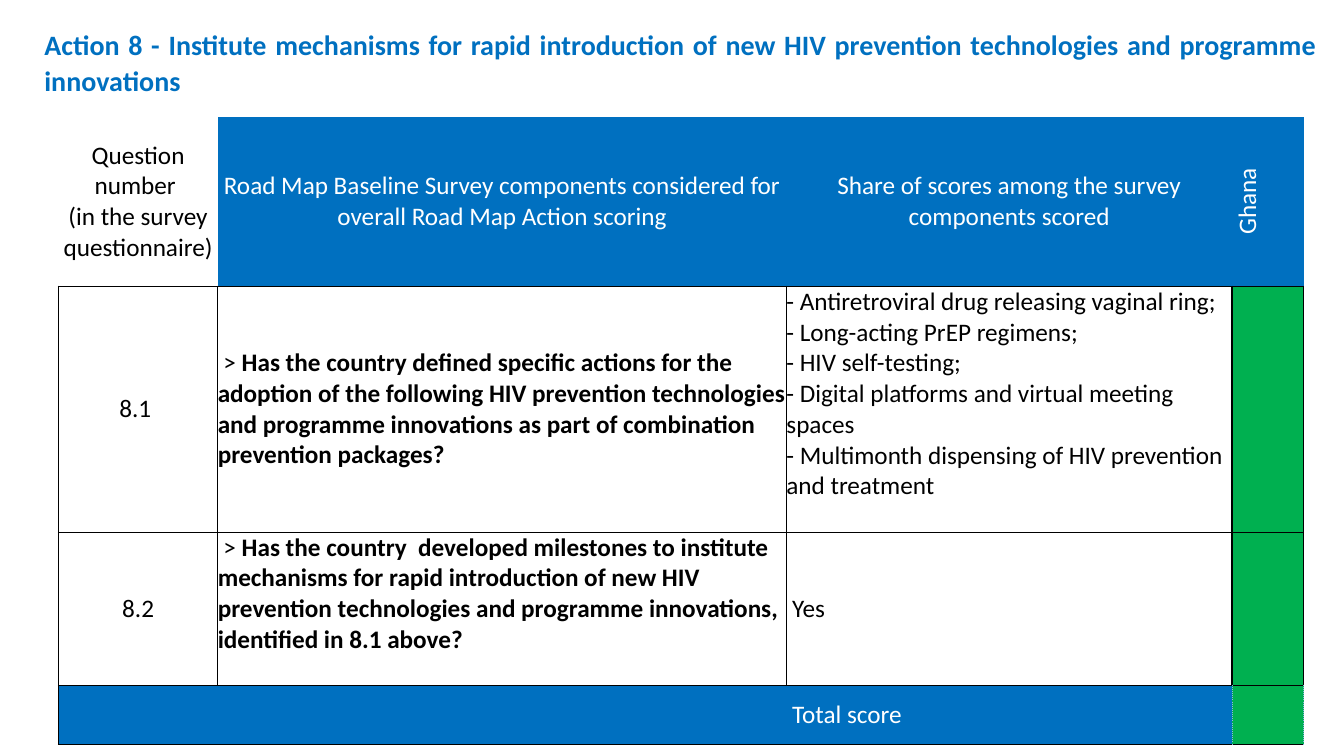
from lxml.etree import SubElement
from pptx import Presentation
from pptx.dml.color import RGBColor
from pptx.enum.text import MSO_ANCHOR, MSO_AUTO_SIZE, PP_ALIGN
from pptx.oxml import parse_xml
from pptx.oxml.ns import nsdecls, qn
from pptx.util import Inches, Pt

COLORS = {"blue": "0070C0", "green": "00B050", "black": "000000",
          "white": "FFFFFF", "pale": "8DB4E2"}
COLUMN_WIDTHS = [1.58, 5.64, 4.42, 0.71]
ROW_HEIGHTS = [1.68, 2.44, 1.52, 0.59]

# Borders: color, width in points, dash
SOLID = ("black", 1, "solid")
THIN = ("black", 0.5, "solid")
DOTTED = ("pale", 0.5, "sysDot")
HEADER_BORDERS = {"B": SOLID}
BODY_BORDERS = dict.fromkeys("LRTB", SOLID)
TOTAL_BORDERS = [
    {"L": SOLID, "T": SOLID, "B": THIN},
    {"T": SOLID, "B": THIN},
    {"R": DOTTED, "T": SOLID, "B": THIN},
    {"L": DOTTED, "R": DOTTED, "T": SOLID, "B": THIN},
]

HEADERS = [
    ["Question number ", "(in the survey questionnaire)"],
    ["Road Map Baseline Survey components considered for overall Road Map Action scoring"],
    ["Share of scores among the survey components scored"],
    ["Ghana"],
]
# Number, question, answer options, space under question, space under options
QUESTIONS = [
    ("8.1 ",
     "Has the country defined specific actions for the adoption of the following HIV "
     "prevention technologies and programme innovations as part of combination "
     "prevention packages?",
     ["- Antiretroviral drug releasing vaginal ring;",
      "- Long-acting PrEP regimens;",
      "- HIV self-testing;",
      "- Digital platforms and virtual meeting spaces",
      "- Multimonth dispensing of HIV prevention and treatment"], 0, 0.3),
    ("8.2",
     "Has the country  developed milestones to institute mechanisms for rapid "
     "introduction of new HIV prevention technologies and programme innovations, "
     "identified in 8.1 above?",
     [" Yes"], 0.3, 0),
]


def rgb(name):
    return RGBColor.from_string(COLORS[name])


def add_run(paragraph, text, size=18, color="black", bold=False):
    run = paragraph.add_run()
    run.text = text
    run.font.name = "Calibri"
    run.font.size = Pt(size)
    run.font.bold = bold
    run.font.color.rgb = rgb(color)


def write_cell(cell, lines, color="black", align=PP_ALIGN.LEFT, below=0):
    """Each line is a list of (text, bold) runs or a plain string."""
    cell.margin_left = cell.margin_right = cell.margin_top = 0
    cell.margin_bottom = Inches(below)
    cell.vertical_anchor = MSO_ANCHOR.MIDDLE
    frame = cell.text_frame
    for index, line in enumerate(lines):
        paragraph = frame.add_paragraph() if index else frame.paragraphs[0]
        paragraph.alignment = align
        runs = [(line, False)] if isinstance(line, str) else line
        for text, bold in runs:
            add_run(paragraph, text, color=color, bold=bold)


def style_cell(cell, borders, fill=None):
    if fill:
        cell.fill.solid()
        cell.fill.fore_color.rgb = rgb(fill)
    else:
        cell.fill.background()
    properties = cell._tc.get_or_add_tcPr()
    for index, side in enumerate("LRTB"):
        line = parse_xml(f'<a:ln{side} {nsdecls("a")}/>')
        if side in borders:
            color, width, dash = borders[side]
            line.set("w", str(Pt(width)))
            solid = SubElement(line, qn("a:solidFill"))
            SubElement(solid, qn("a:srgbClr")).set("val", COLORS[color])
            SubElement(line, qn("a:prstDash")).set("val", dash)
        else:
            SubElement(line, qn("a:noFill"))
        properties.insert(index, line)


def add_title(slide, left, top, width, height):
    title = slide.shapes.title
    title.left, title.top = Inches(left), Inches(top)
    title.width, title.height = Inches(width), Inches(height)
    frame = title.text_frame
    frame.word_wrap = True
    frame.auto_size = MSO_AUTO_SIZE.SHAPE_TO_FIT_TEXT
    frame.vertical_anchor = MSO_ANCHOR.TOP
    paragraph = frame.paragraphs[0]
    paragraph.alignment = PP_ALIGN.JUSTIFY
    paragraph.line_spacing = 1.07
    paragraph.space_before = Pt(0)
    paragraph.space_after = Pt(8)
    add_run(paragraph, "Action 8 - Institute mechanisms for rapid introduction of new HIV "
            "prevention technologies and programme innovations",
            size=20, color="blue", bold=True)


def fill_header(table):
    for column, lines in enumerate(HEADERS):
        cell = table.cell(0, column)
        write_cell(cell, lines, color="white" if column else "black",
                   align=PP_ALIGN.CENTER)
        style_cell(cell, HEADER_BORDERS, "blue" if column else None)
    # Country name reads upwards
    country = table.cell(0, len(HEADERS) - 1)
    country.vertical_anchor = MSO_ANCHOR.BOTTOM
    country._tc.get_or_add_tcPr().set("vert", "vert270")


def fill_questions(table):
    for row, (number, question, options, below_question, below_options) in enumerate(QUESTIONS, 1):
        write_cell(table.cell(row, 0), [number], align=PP_ALIGN.CENTER)
        write_cell(table.cell(row, 1), [[(" > ", False), (question, True)]],
                   below=below_question)
        write_cell(table.cell(row, 2), options, below=below_options)
        for column, fill in enumerate([None, None, None, "green"]):
            style_cell(table.cell(row, column), BODY_BORDERS, fill)


def fill_total(table):
    row = len(ROW_HEIGHTS) - 1
    write_cell(table.cell(row, 2), [" Total score"], color="white")
    for column, borders in enumerate(TOTAL_BORDERS):
        style_cell(table.cell(row, column), borders, "green" if column == 3 else "blue")


def add_score_table(slide, left, top):
    table = slide.shapes.add_table(
        len(ROW_HEIGHTS), len(COLUMN_WIDTHS), Inches(left), Inches(top),
        Inches(sum(COLUMN_WIDTHS)), Inches(sum(ROW_HEIGHTS))).table
    table.first_row = table.horz_banding = False
    for column, width in zip(table.columns, COLUMN_WIDTHS):
        column.width = Inches(width)
    for row, height in zip(table.rows, ROW_HEIGHTS):
        row.height = Inches(height)
    fill_header(table)
    fill_questions(table)
    fill_total(table)


def main():
    presentation = Presentation()
    presentation.slide_width = Inches(13.33)
    presentation.slide_height = Inches(7.5)
    slide = presentation.slides.add_slide(presentation.slide_layouts.get_by_name("Title Only"))
    add_title(slide, 0.34, 0.2, 12.82, 0.81)
    add_score_table(slide, 0.58, 1.16)
    presentation.save("out.pptx")


if __name__ == "__main__":
    main()
